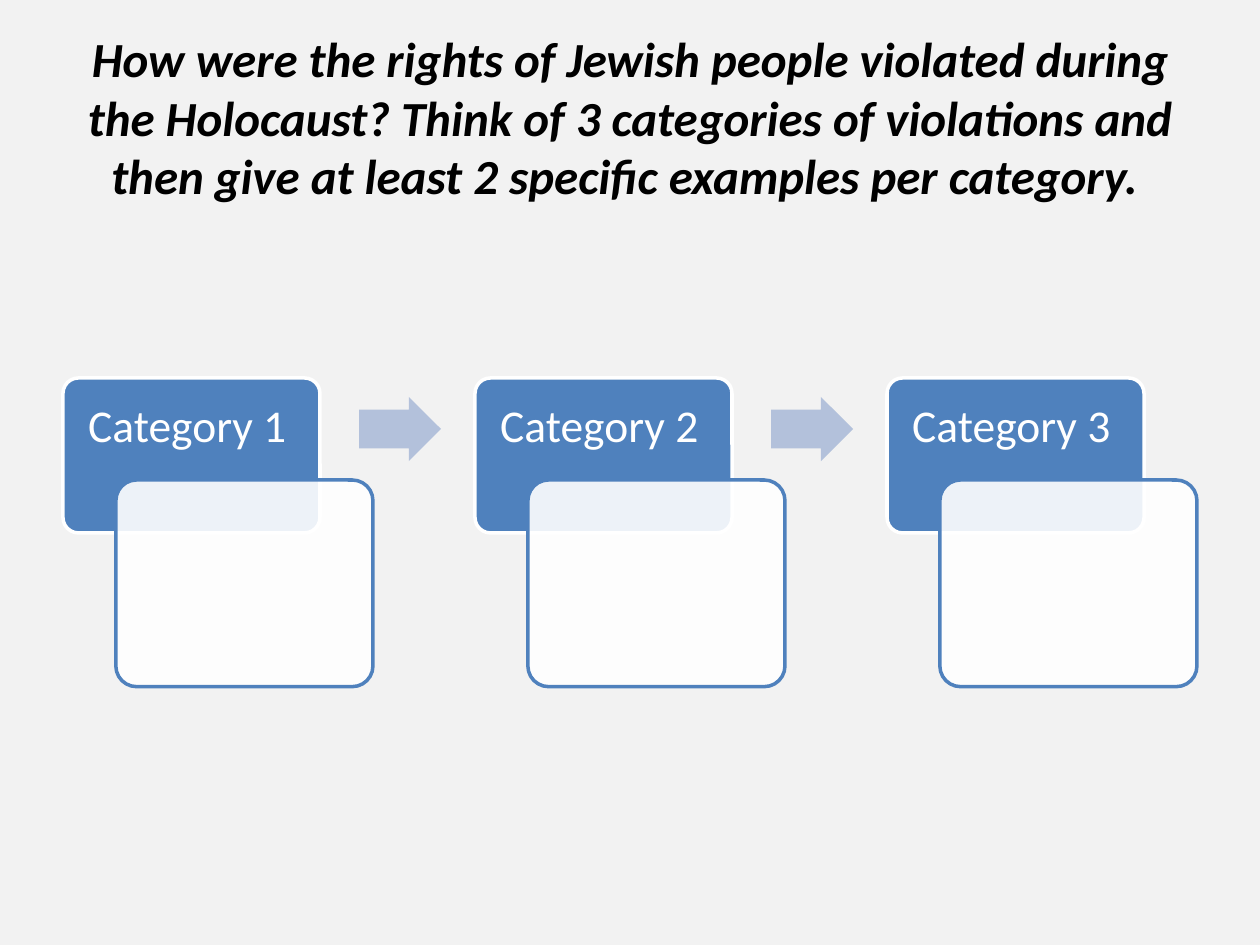
from dataclasses import dataclass

from lxml import etree
from pptx import Presentation
from pptx.dml.color import RGBColor
from pptx.enum.shapes import MSO_SHAPE
from pptx.enum.text import MSO_ANCHOR, PP_ALIGN
from pptx.oxml.ns import qn
from pptx.util import Inches, Pt

ROUNDED = MSO_SHAPE.ROUNDED_RECTANGLE
ARROW = MSO_SHAPE.RIGHT_ARROW
TOP, MIDDLE = MSO_ANCHOR.TOP, MSO_ANCHOR.MIDDLE
LEFT, CENTER = PP_ALIGN.LEFT, PP_ALIGN.CENTER

BACKGROUND = RGBColor(0xF2, 0xF2, 0xF2)
BLUE = RGBColor(0x4F, 0x81, 0xBD)
PALE_BLUE = RGBColor(0xB3, 0xC1, 0xDB)
WHITE = RGBColor(0xFF, 0xFF, 0xFF)
BLACK = RGBColor(0x00, 0x00, 0x00)

FONT = "Calibri"
PAGE_WIDTH, PAGE_HEIGHT = 10, 7.5
MARGIN = 0.05 * PAGE_WIDTH
ROW_TOP = 0.4 * PAGE_HEIGHT
COLUMN_STEP = 3.27
TITLE = (
    "How were the rights of Jewish people violated during the Holocaust? "
    "Think of 3 categories of violations and then give at least 2 specific "
    "examples per category. "
)
CATEGORIES = ("Category 1", "Category 2", "Category 3")


@dataclass(frozen=True)
class Area:
    left: float
    top: float
    width: float
    height: float

    def in_column(self, column: int) -> tuple:
        left = MARGIN + column * COLUMN_STEP + self.left
        lengths = (left, ROW_TOP + self.top, self.width, self.height)
        return tuple(Inches(length) for length in lengths)


HEADER = Area(0, 0, 2.04, 1.23)
LABEL = Area(0, 0, 2.04, 0.81)
EXAMPLES = Area(0.42, 0.81, 2.04, 1.64)
NEXT_ARROW = Area(2.35, 0.15, 0.65, 0.51)


def add_block(page, kind, area: Area, column: int, fill: RGBColor, adjustments: tuple):
    block = page.shapes.add_shape(kind, *area.in_column(column))
    block.shadow.inherit = False
    block.fill.solid()
    block.fill.fore_color.rgb = fill
    block.line.fill.background()
    for index, value in enumerate(adjustments):
        block.adjustments[index] = value
    return block


def add_card(page, area: Area, column: int, fill: RGBColor, outline: RGBColor):
    card = add_block(page, ROUNDED, area, column, fill, (0.1,))
    card.line.color.rgb = outline
    card.line.width = Pt(2)
    return card


def set_opacity(block, percent: int) -> None:
    color = block.fill._xPr.find(qn("a:solidFill"))[0]
    etree.SubElement(color, qn("a:alpha"), val=str(percent * 1000))


def format_text(para, size: float, color: RGBColor, emphasis: bool = False) -> None:
    for span in para.runs:
        span.font.name = FONT
        span.font.size = Pt(size)
        span.font.color.rgb = color
        span.font.bold = span.font.italic = emphasis


def add_label(page, column: int, text: str) -> None:
    box = page.shapes.add_textbox(*LABEL.in_column(column))
    frame = box.text_frame
    frame.word_wrap = True
    frame.vertical_anchor = TOP
    frame.margin_left = frame.margin_right = frame.margin_top = Inches(0.2)
    frame.margin_bottom = Inches(0.11)
    frame.text = text
    para = frame.paragraphs[0]
    para.alignment = LEFT
    para.line_spacing = 0.9
    format_text(para, 26, WHITE)


def add_category(page, column: int, text: str) -> None:
    add_card(page, HEADER, column, BLUE, WHITE)
    add_label(page, column, text)
    set_opacity(add_card(page, EXAMPLES, column, WHITE, BLUE), 90)
    if column < len(CATEGORIES) - 1:
        add_block(page, ARROW, NEXT_ARROW, column, PALE_BLUE, (0.6, 0.5))


def set_title(page) -> None:
    title = page.shapes.title
    title.left, title.top = Inches(MARGIN), Inches(0.04 * PAGE_HEIGHT)
    title.width, title.height = Inches(0.9 * PAGE_WIDTH), Inches(1.25)
    frame = title.text_frame
    frame.text = TITLE
    frame.word_wrap = True
    frame.vertical_anchor = MIDDLE
    para = frame.paragraphs[0]
    para.alignment = CENTER
    format_text(para, 28, BLACK, emphasis=True)


def main() -> None:
    deck = Presentation()
    deck.slide_width, deck.slide_height = Inches(PAGE_WIDTH), Inches(PAGE_HEIGHT)
    page = deck.slides.add_slide(deck.slide_layouts[5])
    page.background.fill.solid()
    page.background.fill.fore_color.rgb = BACKGROUND
    set_title(page)
    for column, text in enumerate(CATEGORIES):
        add_category(page, column, text)
    deck.save("out.pptx")


if __name__ == "__main__":
    main()
